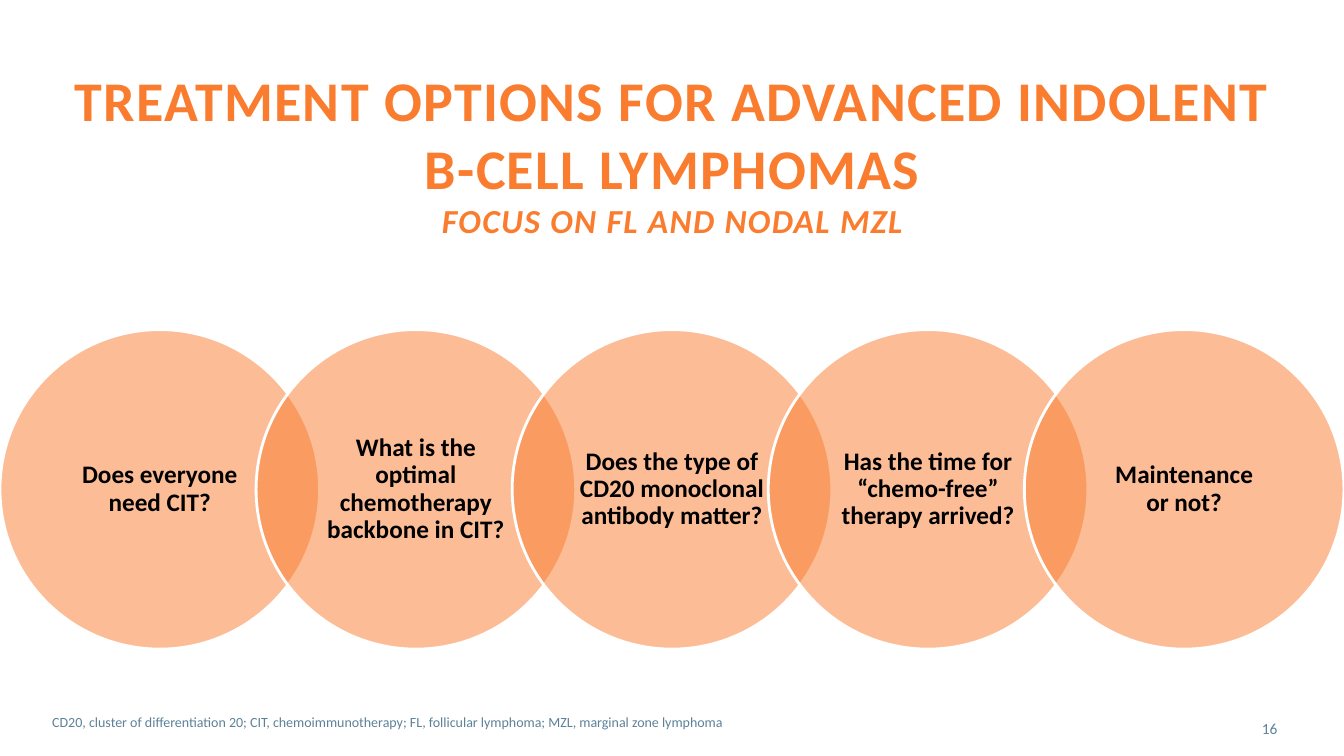
from lxml.etree import SubElement
from pptx import Presentation
from pptx.dml.color import RGBColor
from pptx.enum.shapes import MSO_SHAPE as Shape
from pptx.enum.text import MSO_ANCHOR as Anchor, PP_ALIGN as Align
from pptx.oxml.ns import qn
from pptx.util import Inches, Pt

ORANGE, SLATE, BLACK, WHITE = "FA7C2E", "5D8298", "000000", "FFFFFF"
TITLE = "TREATMENT OPTIONS FOR ADVANCED INDOLENT B-CELL LYMPHOMAS"
FOCUS = "FOCUS ON FL AND NODAL MZL"
TOPICS = [
    "Does everyone need CIT?",
    "What is the optimal chemotherapy backbone in CIT?",
    "Does the type of CD20 monoclonal antibody matter?",
    "Has the time for “chemo-free” therapy arrived?",
    "Maintenance\vor not?",
]
NOTE = ("CD20, cluster of differentiation 20; CIT, chemoimmunotherapy; "
        "FL, follicular lymphoma; MZL, marginal zone lymphoma")
WIDE, HIGH = 13.33, 7.5
SIZE, TOP = 3.17, 3.27
STEP = (WIDE - SIZE) / (len(TOPICS) - 1)

HEAD = dict(size=Pt(40), bold=True)
SUB = dict(size=Pt(24), bold=True, italic=True)
TOPIC = dict(size=Pt(18), bold=True)


def color(code):
    return RGBColor.from_string(code)


def write(para, text, look, code, align):
    para.text = text
    para.alignment = align
    para.font.name = "Calibri"
    para.font.color.rgb = color(code)
    for key, value in look.items():
        setattr(para.font, key, value)


def frame(shape, anchor, pad_x=0, pad_y=0):
    body = shape.text_frame
    look = dict(word_wrap=True, vertical_anchor=anchor,
                margin_left=Inches(pad_x), margin_right=Inches(pad_x),
                margin_top=Inches(pad_y), margin_bottom=Inches(pad_y))
    for key, value in look.items():
        setattr(body, key, value)
    return body


def box(slide, place, anchor, pad_x=0, pad_y=0):
    shape = slide.shapes.add_textbox(*map(Inches, place))
    return frame(shape, anchor, pad_x, pad_y)


def circle(slide, left, text):
    shape = slide.shapes.add_shape(
        Shape.OVAL, *map(Inches, (left, TOP, SIZE, SIZE)))
    shape.shadow.inherit = False
    shape.fill.solid()
    shape.fill.fore_color.rgb = color(ORANGE)
    tint = shape.fill._xPr.find(qn("a:solidFill"))[0]
    SubElement(tint, qn("a:alpha"), val="50000")
    shape.line.color.rgb = color(WHITE)
    shape.line.width = Pt(2)
    para = frame(shape, Anchor.MIDDLE, 0.17, 0.03).paragraphs[0]
    write(para, text, TOPIC, BLACK, Align.CENTER)
    para.line_spacing = 0.9


def main():
    deck = Presentation()
    deck.slide_width, deck.slide_height = Inches(WIDE), Inches(HIGH)
    slide = deck.slides.add_slide(deck.slide_layouts[6])

    body = box(slide, (0.67, 0.64, 12, 1.76), Anchor.MIDDLE)
    write(body.paragraphs[0], TITLE, HEAD, ORANGE, Align.CENTER)
    write(body.add_paragraph(), FOCUS, SUB, ORANGE, Align.CENTER)
    for para in body.paragraphs:
        para.runs[0].font._element.set("spc", "100")

    for i, text in enumerate(TOPICS):
        circle(slide, i * STEP, text)

    page = box(slide, (11.81, 7.03, 0.86, 0.4), Anchor.MIDDLE)
    write(page.paragraphs[0], "16", dict(size=Pt(11)), SLATE, Align.RIGHT)
    note = box(slide, (0.42, 7.03, 8.04, 0.27), Anchor.TOP, 0.1, 0.05)
    write(note.paragraphs[0], NOTE, dict(size=Pt(10)), SLATE, Align.LEFT)
    deck.save("out.pptx")


if __name__ == "__main__":
    main()
